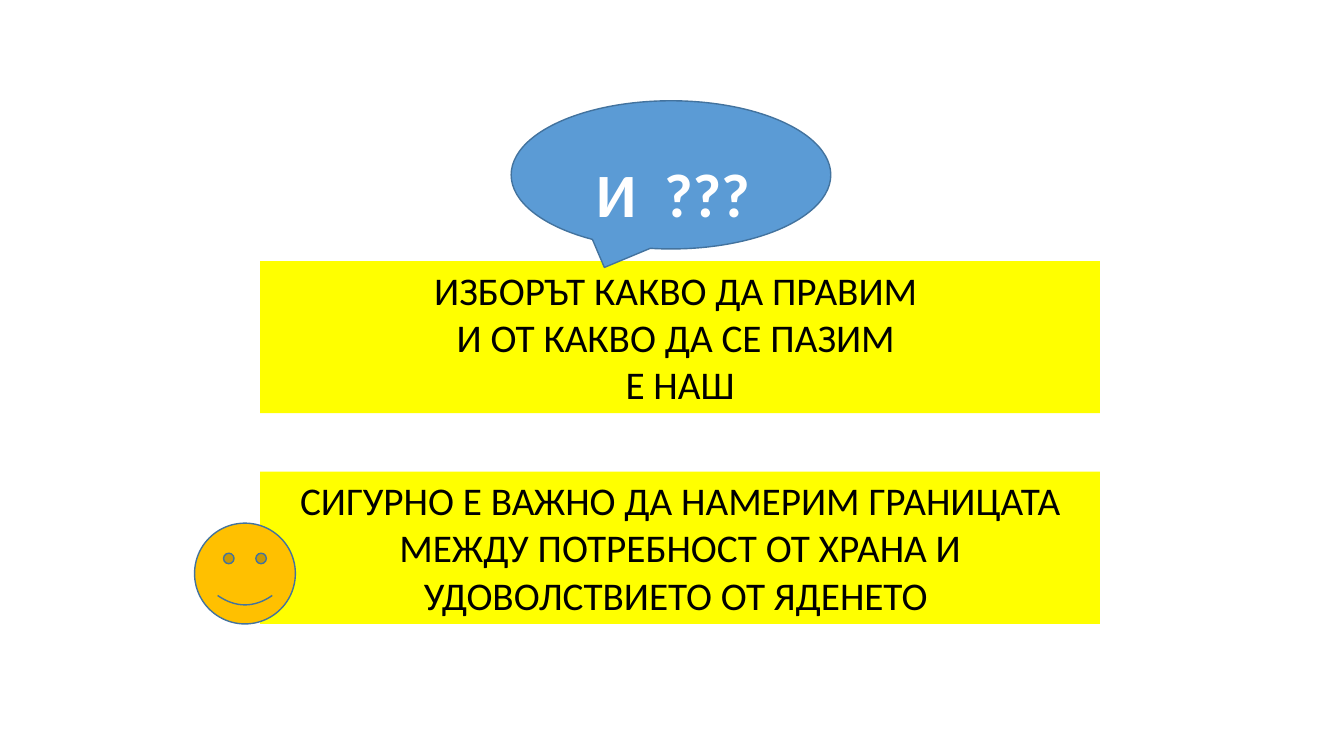
"""Build a slide with a speech bubble, two yellow statements and a smiley."""
from pptx import Presentation
from pptx.dml.color import RGBColor
from pptx.enum.shapes import MSO_SHAPE as Preset
from pptx.enum.text import MSO_ANCHOR as Anchor, PP_ALIGN as Align
from pptx.util import Inches, Pt

FONT = "Calibri"
BLACK = RGBColor(0x00, 0x00, 0x00)
WHITE = RGBColor(0xFF, 0xFF, 0xFF)
YELLOW = RGBColor(0xFF, 0xFF, 0x00)
ORANGE = RGBColor(0xFF, 0xC0, 0x00)
BLUE = RGBColor(0x5B, 0x9B, 0xD5)
OUTLINE = RGBColor(0x43, 0x73, 0x9E)

WIDTH, HEIGHT = 13.33, 7.5
BANNER_LEFT, BANNER_TOP = 2.58 / WIDTH, 2.59 / HEIGHT
BANNER_WIDTH, BANNER_HEIGHT = 8.33 / WIDTH, 1.51 / HEIGHT
BANNER_STEP = 2.09 / HEIGHT
STATEMENTS = (
    "ИЗБОРЪТ КАКВО ДА ПРАВИМ \nИ ОТ КАКВО ДА СЕ ПАЗИМ \nЕ НАШ",
    "СИГУРНО Е ВАЖНО ДА НАМЕРИМ ГРАНИЦАТА МЕЖДУ ПОТРЕБНОСТ "
    "ОТ ХРАНА И УДОВОЛСТВИЕТО ОТ ЯДЕНЕТО ",
)


def place(left, top, width, height):
    """Turn shares of the slide's size into lengths."""
    return (Inches(left * WIDTH), Inches(top * HEIGHT),
            Inches(width * WIDTH), Inches(height * HEIGHT))


def add_figure(page, preset, area, fill, outline=None):
    """Add a flat preset shape, outlined only when a colour is given."""
    figure = page.shapes.add_shape(preset, *place(*area))
    figure.shadow.inherit = False
    figure.fill.solid()
    figure.fill.fore_color.rgb = fill
    if outline is None:
        figure.line.fill.background()
    else:
        figure.line.color.rgb = outline
        figure.line.width = Pt(1)
    return figure


def write(box, text, size, color, bold=False):
    """Write centred text, one paragraph to a line."""
    frame = box.text_frame
    frame.text = text
    frame.word_wrap = True
    frame.vertical_anchor = Anchor.TOP
    for para in frame.paragraphs:
        para.alignment = Align.CENTER
        for run in para.runs:
            run.font.name = FONT
            run.font.size = Pt(size)
            run.font.bold = bold
            run.font.color.rgb = color


def add_banner(page, row, statement):
    """Add a yellow statement on the given row."""
    area = (BANNER_LEFT, BANNER_TOP + row * BANNER_STEP,
            BANNER_WIDTH, BANNER_HEIGHT)
    write(add_figure(page, Preset.RECTANGLE, area, YELLOW),
          statement, 28, BLACK)


def add_question(page):
    """Add the speech bubble and the question over it."""
    bubble = (5.07 / WIDTH, 1 / HEIGHT, 3.17 / WIDTH, 1.47 / HEIGHT)
    add_figure(page, Preset.OVAL_CALLOUT, bubble, BLUE, OUTLINE)
    area = (5.55 / WIDTH, 1.5 / HEIGHT, 2.25 / WIDTH, 0.84 / HEIGHT)
    box = page.shapes.add_textbox(*place(*area))
    write(box, "И  ???", 44, WHITE, bold=True)


def main():
    """Build and save the deck."""
    deck = Presentation()
    deck.slide_width, deck.slide_height = Inches(WIDTH), Inches(HEIGHT)
    page = deck.slides.add_slide(deck.slide_layouts[6])
    for row, statement in enumerate(STATEMENTS):
        add_banner(page, row, statement)
    smiley = (1.93 / WIDTH, 5.19 / HEIGHT, 1 / WIDTH, 1 / HEIGHT)
    add_figure(page, Preset.SMILEY_FACE, smiley, ORANGE, OUTLINE)
    add_question(page)
    deck.save("out.pptx")


if __name__ == "__main__":
    main()
